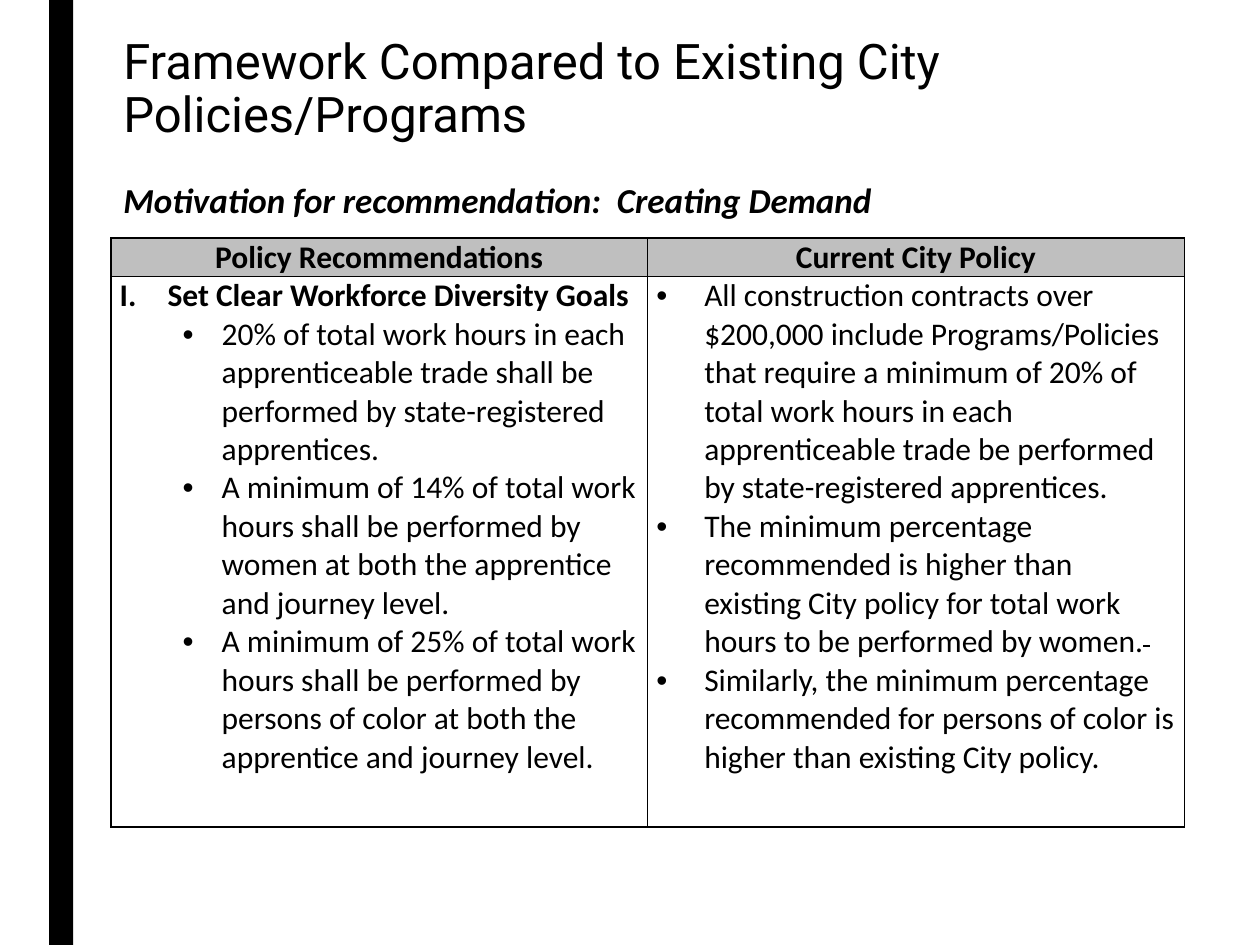
from lxml.etree import SubElement as Sub
from pptx import Presentation
from pptx.dml.color import RGBColor as Rgb
from pptx.enum.shapes import MSO_SHAPE as Shape
from pptx.enum.text import MSO_ANCHOR as Anchor, PP_ALIGN as Align
from pptx.oxml.ns import qn
from pptx.util import Inches, Pt

HUES = {"ink": "000000", "head": "BFBFBF"}
HEADS = ["Policy Recommendations", "Current City Policy"]
GOAL = "Set Clear Workforce Diversity Goals"
AIMS = [
    "20% of total work hours in each apprenticeable trade shall be "
    "performed by state-registered apprentices.",
    "A minimum of 14% of total work hours shall be performed by women "
    "at both the apprentice and journey level.",
    "A minimum of 25% of total work hours shall be performed by persons "
    "of color at both the apprentice and journey level.",
]
RULES = [
    ["All construction contracts over $200,000 include Programs/Policies "
     "that require a minimum of 20% of total work hours in each "
     "apprenticeable trade be performed by state-registered apprentices."],
    ["The minimum percentage recommended is higher than existing City "
     "policy for total work hours to be performed by women.", " "],
    ["Similarly, the minimum percentage recommended for persons of color "
     "is higher than existing City policy."],
]


def hue(name):
    """Return the named colour."""
    return Rgb.from_string(HUES[name])


def add_run(para, text, size=18, face="Calibri", bold=False, slant=False):
    """Add one styled run to a paragraph."""
    run = para.add_run()
    run.text = text
    font = run.font
    font.size, font.name = Pt(size), face
    font.bold, font.italic = bold, slant
    font.color.rgb = hue("ink")
    return run


def add_item(frame, texts, left=0.38, hang=0.38, level=0, roman=False):
    """Add a listed paragraph; any text after the first is struck out."""
    first = frame.paragraphs[0]
    para = frame.add_paragraph() if first.runs else first
    para.level = level
    props = para._p.get_or_add_pPr()
    props.set("marL", str(Inches(left)))
    props.set("indent", str(-Inches(hang)))
    if roman:
        Sub(props, qn("a:buFont"), typeface="+mj-lt")
        Sub(props, qn("a:buAutoNum"), type="romanUcPeriod")
    else:
        Sub(props, qn("a:buFont"), typeface="Arial")
        Sub(props, qn("a:buChar"), char="•")
    for spot, text in enumerate(texts):
        run = add_run(para, text, bold=roman)
        if spot:
            run.font._element.set("strike", "sngStrike")


def style_cell(cell, fill=None):
    """Set a cell's margins, borders and fill."""
    cell.margin_left = cell.margin_right = Inches(0.07)
    cell.margin_top = cell.margin_bottom = 0
    props = cell._tc.get_or_add_tcPr()
    for side in ("lnL", "lnR", "lnT", "lnB"):
        line = Sub(props, qn(f"a:{side}"), w=str(Pt(1)))
        Sub(Sub(line, qn("a:solidFill")), qn("a:srgbClr"), val=HUES["ink"])
    if fill:
        cell.fill.solid()
        cell.fill.fore_color.rgb = hue(fill)
    else:
        cell.fill.background()


def add_bar(slide, box):
    """Draw the upright bar."""
    bar = slide.shapes.add_shape(Shape.RECTANGLE, *map(Inches, box))
    bar.shadow.inherit = False
    bar.fill.solid()
    bar.fill.fore_color.rgb = hue("ink")
    bar.line.fill.background()


def add_text(slide, box, text, space=None, anchor=Anchor.TOP, **style):
    """Place a one-paragraph text box."""
    frame = slide.shapes.add_textbox(*map(Inches, box)).text_frame
    frame.word_wrap = True
    frame.vertical_anchor = anchor
    para = frame.paragraphs[0]
    if space:
        para.line_spacing = space
    add_run(para, text, **style)


def add_grid(slide, box):
    """Place the table that compares goals with policy."""
    grid = slide.shapes.add_table(2, 2, *map(Inches, box)).table
    grid.first_row = grid.horz_banding = False
    top = 0.29
    for row, high in zip(grid.rows, (top, box[3] - top)):
        row.height = Inches(high)
    for col, (part, head) in enumerate(zip(grid.columns, HEADS)):
        part.width = Inches(box[2] / 2)
        cell = grid.cell(0, col)
        style_cell(cell, "head")
        para = cell.text_frame.paragraphs[0]
        para.alignment = Align.CENTER
        add_run(para, head, bold=True)
        style_cell(grid.cell(1, col))
    goals, rules = (grid.cell(1, col).text_frame for col in range(2))
    add_item(goals, [GOAL], roman=True)
    for aim in AIMS:
        add_item(goals, [aim], 0.81, 0.31, level=1)
    for texts in RULES:
        add_item(rules, texts)


def main():
    """Build and save the slide."""
    deck = Presentation()
    deck.slide_width, deck.slide_height = Inches(10), Inches(7.5)
    slide = deck.slides.add_slide(deck.slide_layouts[6])
    add_bar(slide, (0.39, 0, 0.19, 7.5))
    add_grid(slide, (0.88, 1.89, 8.52, 4.66))
    add_text(slide, (0.88, 0.27, 7.88, 0.89),
             "Framework Compared to Existing City Policies/Programs",
             space=0.89, anchor=Anchor.MIDDLE, size=28, face="Roboto")
    add_text(slide, (0.88, 1.37, 7.72, 0.44),
             "Motivation for recommendation:  Creating Demand",
             size=20, bold=True, slant=True)
    deck.save("out.pptx")


if __name__ == "__main__":
    main()
